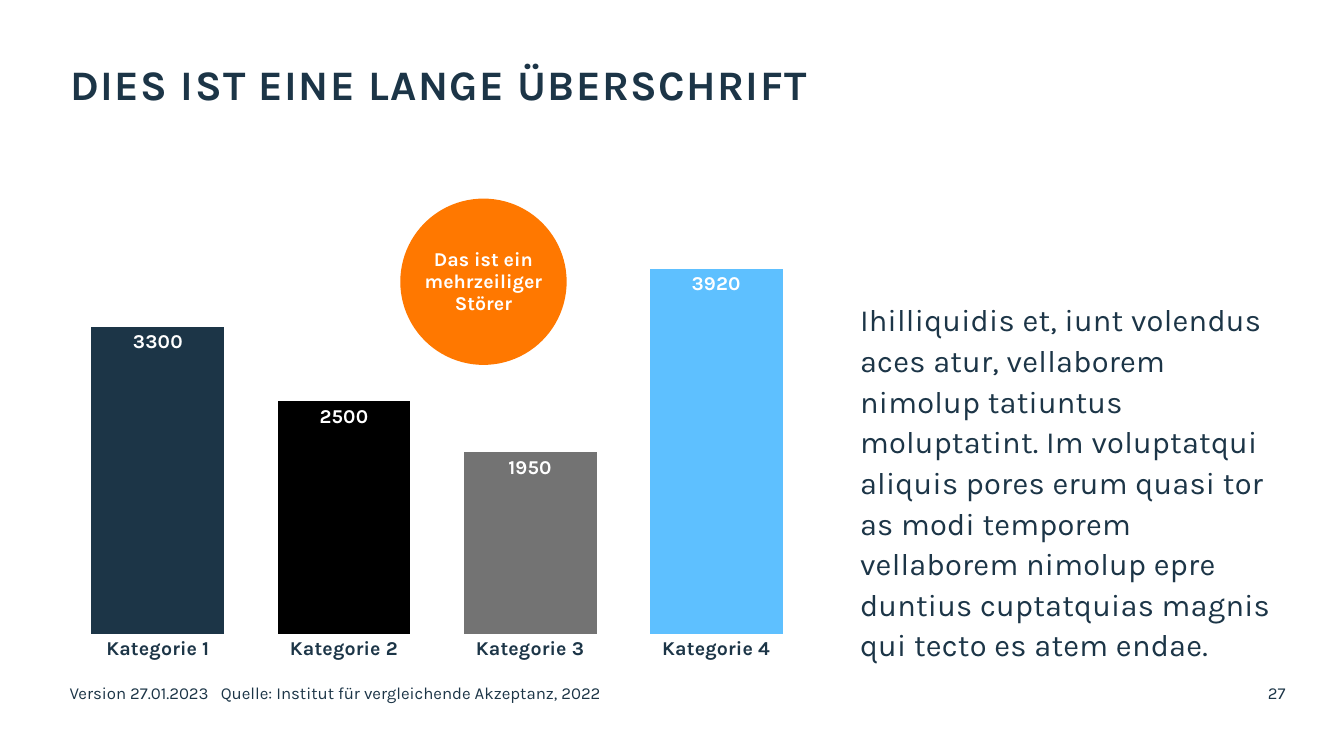
from dataclasses import dataclass, field
from typing import Any

from lxml import etree
from pptx import Presentation
from pptx import util as u
from pptx.chart import data as cd
from pptx.dml import color as col
from pptx.enum import chart as ch, shapes as sh, text as tx
from pptx.oxml import ns


@dataclass(frozen=True)
class Theme:
    face: str = "Karla"
    navy: str = "1C3547"
    black: str = "000000"
    grey: str = "737373"
    sky: str = "5EC0FF"
    flame: str = "FF7800"
    white: str = "FFFFFF"
    head: int = 30
    body: int = 22
    label: int = 14
    foot: int = 12


THEME = Theme()


@dataclass(frozen=True)
class Block:
    text: str
    box: tuple[float, float, float, float]
    size: int
    tint: str = THEME.navy
    bold: bool = False
    track: int = 0
    tab: float = 0
    para: dict[str, Any] = field(default_factory=dict)
    frame: dict[str, Any] = field(default_factory=dict)


@dataclass(frozen=True)
class Bar:
    name: str
    value: int
    tint: str


TITLE = Block("DIES IST EINE LANGE ÜBERSCHRIFT", (0.7, 0.66, 8.2, 1.12),
              THEME.head, bold=True, track=100, para={"line_spacing": 0.85})
BODY = Block(
    "Ihilliquidis et, iunt volendus aces atur, vellaborem nimolup tatiuntus "
    "moluptatint. Im voluptatqui aliquis pores erum quasi tor as modi temporem "
    "vellaborem nimolup epre duntius cuptatquias magnis \v"
    "qui tecto es atem endae.",
    (8.53, 2.95, 4.21, 3.49), THEME.body, track=20, para={"line_spacing": 1.1})
BADGE = Block("Das ist ein mehrzeiliger Störer", (3.97, 1.97, 1.65, 1.65),
              THEME.label, THEME.white, bold=True,
              para={"alignment": tx.PP_ALIGN.CENTER, "line_spacing": 0.95},
              frame={"vertical_anchor": tx.MSO_ANCHOR.MIDDLE})
FEET = (
    Block("27", (10.6, 6.77, 2.15, 0.4), THEME.foot,
          para={"alignment": tx.PP_ALIGN.RIGHT}),
    Block("Version 27.01.2023\tQuelle: Institut für vergleichende Akzeptanz, 2022",
          (0.69, 6.77, 8.23, 0.4), THEME.foot, tab=1.49),
)
BARS = (
    Bar("Kategorie 1", 3300, THEME.navy),
    Bar("Kategorie 2", 2500, THEME.black),
    Bar("Kategorie 3", 1950, THEME.grey),
    Bar("Kategorie 4", 3920, THEME.sky),
)
CHART = (0.49, 2.04, 7.69, 4.62)
PLOT = {"x": 0.02, "y": 0.02, "w": 0.96, "h": 0.9}


def apply(item: Any, vals: dict[str, Any]) -> None:
    for key, val in vals.items():
        setattr(item, key, val)


def style(font: Any, size: int, tint: str, bold: bool = False) -> None:
    apply(font, {"name": THEME.face, "size": u.Pt(size), "bold": bold})
    font.color.rgb = col.RGBColor.from_string(tint)


def paint(fill: Any, tint: str) -> None:
    fill.solid()
    fill.fore_color.rgb = col.RGBColor.from_string(tint)


def place(shape: Any, box: tuple[float, float, float, float]) -> None:
    keys = ("left", "top", "width", "height")
    apply(shape, dict(zip(keys, map(u.Inches, box))))


def write(shape: Any, block: Block) -> None:
    place(shape, block.box)
    frame = shape.text_frame
    base = {"word_wrap": True, "auto_size": tx.MSO_AUTO_SIZE.NONE,
            "vertical_anchor": tx.MSO_ANCHOR.TOP}
    edges = dict.fromkeys(("margin_left", "margin_top", "margin_right",
                           "margin_bottom"), 0)
    apply(frame, base | edges | block.frame)
    para = frame.paragraphs[0]
    para.text = block.text
    props = para._p.get_or_add_pPr()
    apply_xml(props, {"marL": "0", "indent": "0"})
    etree.SubElement(props, ns.qn("a:buNone"))
    if block.tab:
        tabs = etree.SubElement(props, ns.qn("a:tabLst"))
        stop = etree.SubElement(tabs, ns.qn("a:tab"))
        apply_xml(stop, {"pos": str(u.Inches(block.tab)), "algn": "l"})
    apply(para, {"alignment": tx.PP_ALIGN.LEFT, "space_before": u.Pt(0)}
          | block.para)
    for run in para.runs:
        style(run.font, block.size, block.tint, block.bold)
        if block.track:
            run.font._element.set("spc", str(block.track))


def apply_xml(node: Any, vals: dict[str, str]) -> None:
    for key, val in vals.items():
        node.set(key, val)


def fit(chart: Any) -> None:
    area = chart._chartSpace.chart.plotArea
    for old in area.findall(ns.qn("c:layout")):
        area.remove(old)
    node = etree.Element(ns.qn("c:layout"))
    area.insert(0, node)
    hand = etree.SubElement(node, ns.qn("c:manualLayout"))
    vals = {"layoutTarget": "inner", "xMode": "edge", "yMode": "edge"} | PLOT
    for key, val in vals.items():
        etree.SubElement(hand, ns.qn(f"c:{key}")).set("val", str(val))


def graph(slide: Any) -> None:
    data = cd.CategoryChartData()
    data.categories = [bar.name for bar in BARS]
    data.add_series("Series 1", [bar.value for bar in BARS])
    chart = slide.shapes.add_chart(
        ch.XL_CHART_TYPE.COLUMN_CLUSTERED, *map(u.Inches, CHART), data).chart
    apply(chart, {"has_legend": False, "has_title": False})
    style(chart.font, 10, THEME.navy)
    axis = chart.category_axis
    apply(axis, {"major_tick_mark": ch.XL_TICK_MARK.NONE,
                 "has_major_gridlines": False})
    axis.format.line.fill.background()
    style(axis.tick_labels.font, THEME.label, THEME.navy, True)
    apply(chart.value_axis, {"visible": False, "has_major_gridlines": False,
                             "minimum_scale": 0, "maximum_scale": 4500})
    plot = chart.plots[0]
    apply(plot, {"gap_width": 40, "overlap": 100, "vary_by_categories": False})
    series = plot.series[0]
    paint(series.format.fill, THEME.navy)
    for idx, bar in enumerate(BARS):
        paint(series.points[idx].format.fill, bar.tint)
    labels = series.data_labels
    apply(labels, {"show_value": True,
                   "position": ch.XL_LABEL_POSITION.INSIDE_END})
    style(labels.font, THEME.label, THEME.white, True)
    fit(chart)


def main() -> None:
    deck = Presentation()
    apply(deck, {"slide_width": u.Inches(13.33), "slide_height": u.Inches(7.5)})
    slide = deck.slides.add_slide(deck.slide_layouts[1])
    graph(slide)
    for foot in FEET:
        write(slide.shapes.add_textbox(0, 0, 0, 0), foot)
    write(slide.shapes.title, TITLE)
    write(slide.placeholders[1], BODY)
    badge = slide.shapes.add_shape(sh.MSO_SHAPE.OVAL, 0, 0, 0, 0)
    badge.shadow.inherit = False
    paint(badge.fill, THEME.flame)
    badge.line.fill.background()
    write(badge, BADGE)
    deck.save("out.pptx")


if __name__ == "__main__":
    main()
